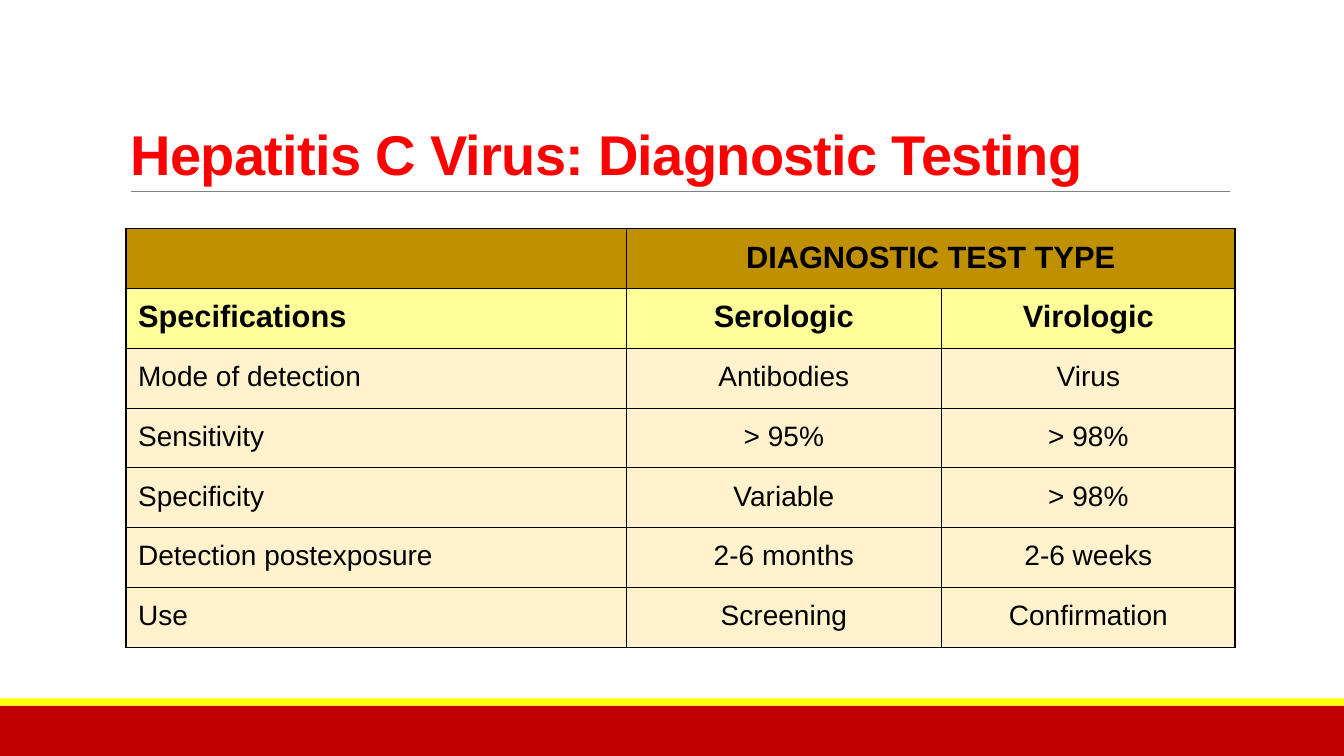
from pptx import Presentation
from pptx.dml.color import RGBColor
from pptx.enum.shapes import MSO_CONNECTOR, MSO_SHAPE
from pptx.enum.text import MSO_ANCHOR, PP_ALIGN
from pptx.oxml import parse_xml
from pptx.oxml.ns import nsdecls
from pptx.util import Inches, Pt
from lxml.etree import SubElement

HUES = {
    "red": "C00000", "yellow": "FFFF00", "title": "FF0000", "rule": "808080",
    "gold": "BF9000", "lemon": "FFFF99", "cream": "FFF2CC", "black": "000000",
}
ROWS = [
    ["", "DIAGNOSTIC TEST TYPE", ""],
    ["Specifications", "Serologic", "Virologic"],
    ["Mode of detection", "Antibodies", "Virus"],
    ["Sensitivity", "> 95%", "> 98%"],
    ["Specificity", "Variable", "> 98%"],
    ["Detection postexposure", "2-6 months", "2-6 weeks"],
    ["Use", "Screening", "Confirmation"],
]


def write(frame, text, size=20, bold=False, hue="black", align=PP_ALIGN.LEFT, lead=0.9, track=0):
    para = frame.paragraphs[0]
    para.alignment = align
    para.line_spacing = lead
    run = para.add_run()
    run.text = text
    run.font.name = "Arial"
    run.font.size = Pt(size)
    run.font.bold = bold
    run.font.color.rgb = RGBColor.from_string(HUES[hue])
    if track:
        run._r.get_or_add_rPr().set("spc", str(track))


deck = Presentation()
deck.slide_width = Inches(13.33)
deck.slide_height = Inches(7.5)
slide = deck.slides.add_slide(deck.slide_layouts[6])
shapes = slide.shapes

for hue, top, height in [("red", 7, 0.5), ("yellow", 6.93, 0.07)]:
    band = shapes.add_shape(MSO_SHAPE.RECTANGLE, 0, Inches(top), deck.slide_width, Inches(height))
    band.shadow.inherit = False
    band.fill.solid()
    band.fill.fore_color.rgb = RGBColor.from_string(HUES[hue])
    band.line.fill.background()

rule = shapes.add_connector(MSO_CONNECTOR.STRAIGHT, Inches(1.3), Inches(1.9), Inches(12.2), Inches(1.9))
rule.line.color.rgb = RGBColor.from_string(HUES["rule"])
rule.line.width = Pt(0.5)
SubElement(rule._element.spPr, "{http://schemas.openxmlformats.org/drawingml/2006/main}effectLst")

title = shapes.add_textbox(Inches(1.2), Inches(0.31), Inches(11), Inches(1.59)).text_frame
title.word_wrap = True
title.vertical_anchor = MSO_ANCHOR.BOTTOM
write(title, "Hepatitis C Virus: Diagnostic Testing", size=40, bold=True, hue="title", lead=0.85, track=-50)

table = shapes.add_table(len(ROWS), 3, Inches(1.25), Inches(2.27), Inches(11), Inches(4.15)).table
table.first_row = False
table.horz_banding = False
for col, width in zip(table.columns, [4.96, 3.13, 2.91]):
    col.width = Inches(width)
for row in table.rows:
    row.height = Inches(0.593)
table.cell(0, 1).merge(table.cell(0, 2))

for r, texts in enumerate(ROWS):
    head = r < 2
    for c, text in enumerate(texts):
        cell = table.cell(r, c)
        cell.vertical_anchor = MSO_ANCHOR.MIDDLE
        cell.margin_left = cell.margin_right = Inches(0.12)
        cell.margin_top = cell.margin_bottom = Inches(0.05)
        for side in "LRTB":
            cell._tc.get_or_add_tcPr().append(parse_xml(
                f'<a:ln{side} {nsdecls("a")} w="12700"><a:solidFill>'
                f'<a:srgbClr val="{HUES["black"]}"/></a:solidFill></a:ln{side}>'))
        cell.fill.solid()
        fill = ["gold", "lemon", "cream"][min(r, 2)]
        cell.fill.fore_color.rgb = RGBColor.from_string(HUES[fill])
        if text:
            write(cell.text_frame, text, size=22 if head else 20, bold=head,
                  align=PP_ALIGN.CENTER if c else PP_ALIGN.LEFT)

deck.save("out.pptx")
